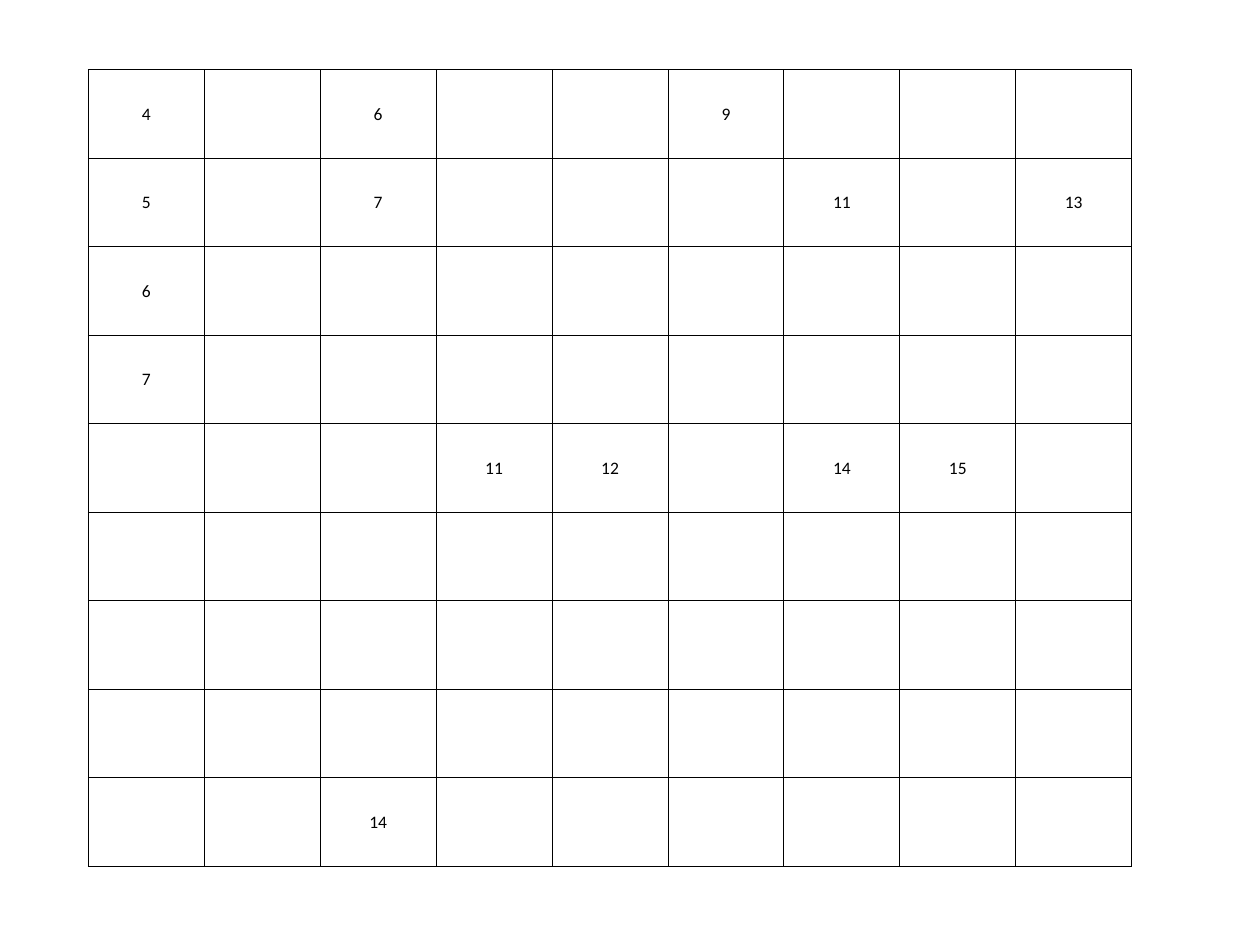
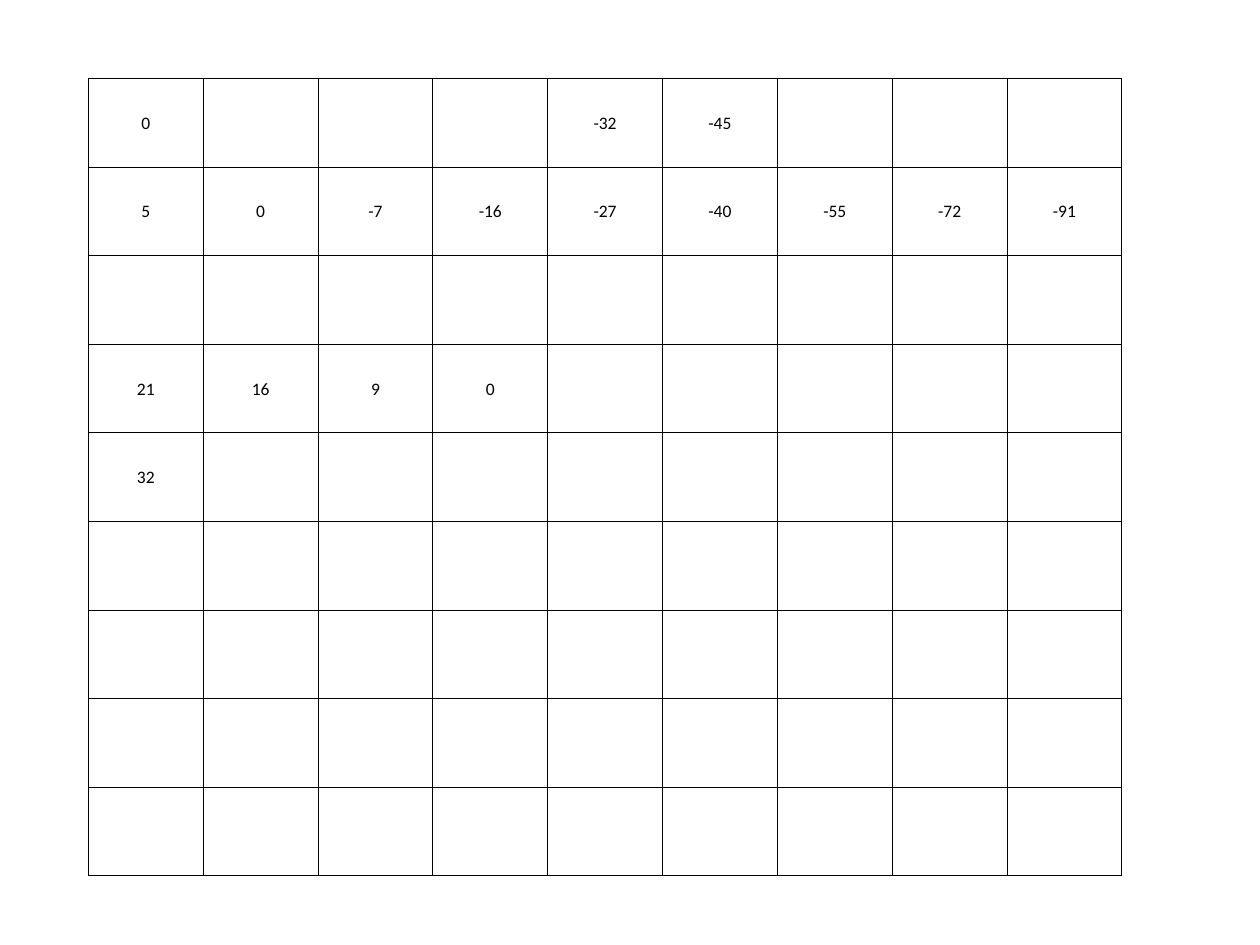
from dataclasses import dataclass
from typing import Callable

from lxml.etree import SubElement
from pptx import Presentation
from pptx.dml.color import RGBColor
from pptx.enum.text import MSO_ANCHOR as Anchor, PP_ALIGN as Align
from pptx.oxml.ns import qn
from pptx.presentation import Presentation as Deck
from pptx.table import _Cell as Cell
from pptx.util import Cm, Pt

GRID_SIZE = 9


@dataclass(frozen=True)
class Theme:
    font: str = "Calibri"
    text_size: Pt = Pt(10)
    ink: RGBColor = RGBColor(0x00, 0x00, 0x00)
    border_width: Pt = Pt(0.5)
    cell_margin: Cm = Cm(0.03)


@dataclass(frozen=True)
class NumberGrid:
    """A square grid whose numbers follow a rule and show in some cells only."""
    left: Cm
    top: Cm
    width: Cm
    height: Cm
    rule: Callable[[int, int], int]
    shown: dict[int, tuple[int, ...]]  # row -> columns with a number


THEME = Theme()

GRIDS = [
    # Sums
    NumberGrid(
        Cm(1.78), Cm(1.4), Cm(21.04), Cm(16.06),
        rule=lambda row, column: (row + 2) + (column + 2),
        shown={0: (0, 2, 5), 1: (0, 2, 6, 8), 2: (0,), 3: (0,),
               4: (3, 4, 6, 7), 8: (2,)},
    ),
    # Differences of squares
    NumberGrid(
        Cm(1.78), Cm(1.58), Cm(20.84), Cm(16.08),
        rule=lambda row, column: (row + 2) ** 2 - (column + 2) ** 2,
        shown={0: (0, 4, 5), 1: tuple(range(GRID_SIZE)),
               3: (0, 1, 2, 3), 4: (0,)},
    ),
]


def draw_borders(cell: Cell) -> None:
    properties = cell._tc.get_or_add_tcPr()
    for side in ("lnL", "lnR", "lnT", "lnB"):
        line = SubElement(properties, qn(f"a:{side}"), w=str(THEME.border_width))
        fill = SubElement(line, qn("a:solidFill"))
        SubElement(fill, qn("a:srgbClr"), val=str(THEME.ink))


def style_cell(cell: Cell, text: str) -> None:
    # Borders must come before the fill in the cell properties
    draw_borders(cell)
    cell.fill.background()
    cell.vertical_anchor = Anchor.MIDDLE
    cell.margin_left = cell.margin_right = cell.margin_top = THEME.cell_margin
    cell.margin_bottom = 0

    cell.text = text
    para = cell.text_frame.paragraphs[0]
    para.alignment = Align.CENTER
    para.font.name = THEME.font
    para.font.size = THEME.text_size
    para.font.color.rgb = THEME.ink


def add_grid_page(deck: Deck, grid: NumberGrid) -> None:
    page = deck.slides.add_slide(deck.slide_layouts[6])
    table = page.shapes.add_table(
        GRID_SIZE, GRID_SIZE, grid.left, grid.top, grid.width, grid.height
    ).table
    table.first_row = table.horz_banding = False

    for row in range(GRID_SIZE):
        for column in range(GRID_SIZE):
            is_shown = column in grid.shown.get(row, ())
            text = str(grid.rule(row, column)) if is_shown else ""
            style_cell(table.cell(row, column), text)


def main() -> None:
    deck = Presentation()
    deck.slide_width, deck.slide_height = Cm(25.4), Cm(19.05)
    for grid in GRIDS:
        add_grid_page(deck, grid)
    deck.save("out.pptx")


if __name__ == "__main__":
    main()
